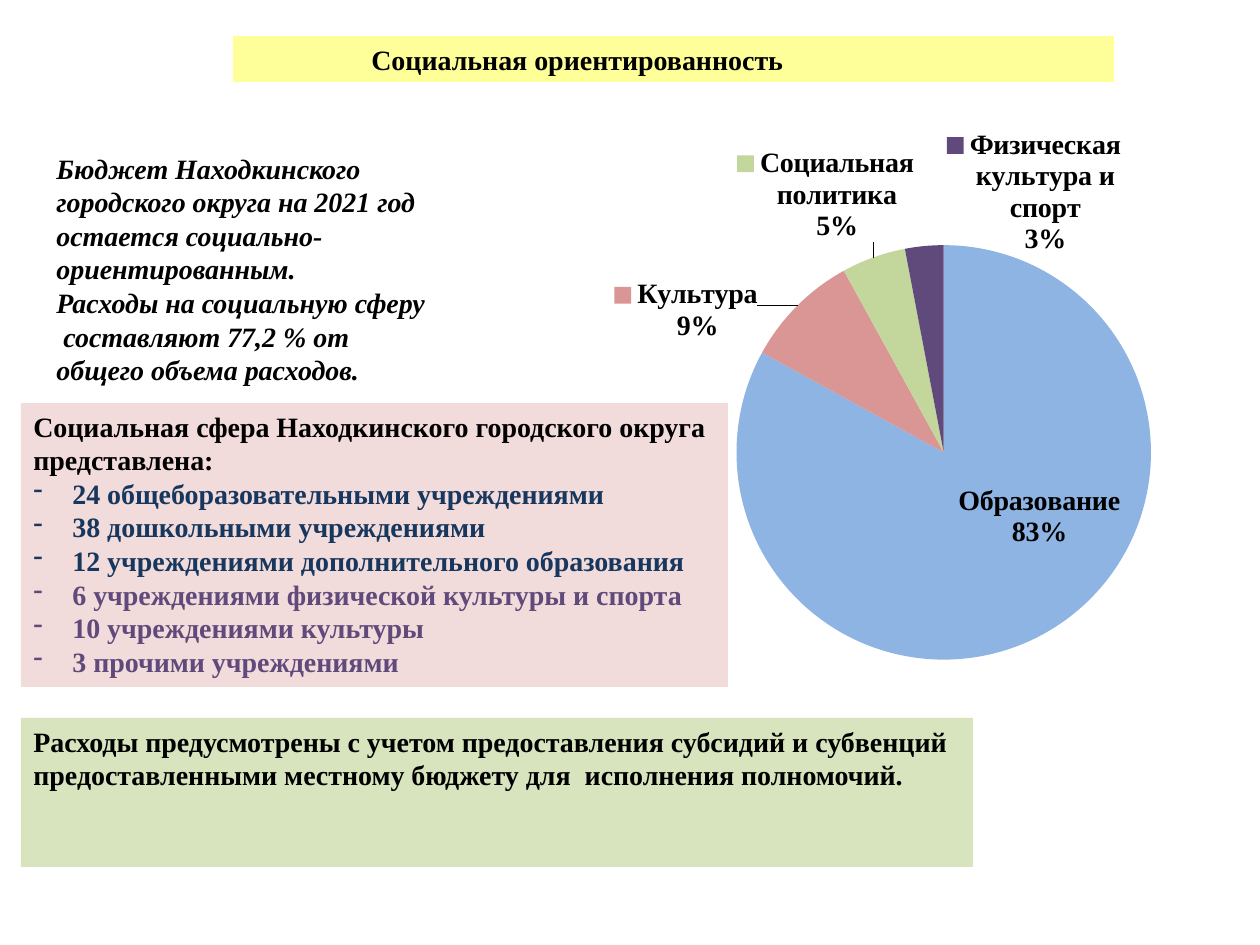
"""Build the slide on the social focus of the city budget."""
from dataclasses import dataclass, field
from typing import Any

import lxml.etree
import pptx
import pptx.chart.data
import pptx.dml.color
import pptx.enum.chart
import pptx.enum.shapes
import pptx.enum.text
import pptx.oxml
import pptx.oxml.ns
import pptx.util

SCALE = 914400 / 126
FACE = "Times New Roman"
COLORS = {
    "black": "000000", "yellow": "FFFF99", "pink": "F2DCDB", "green": "D7E4BD",
    "navy": "17375E", "purple": "604A7B", "blue": "8EB4E3", "rose": "D99694",
    "lime": "C3D69B",
}
BOLD = {"name": FACE, "size": pptx.util.Pt(16), "bold": True}
SLANT = {**BOLD, "italic": True}


@dataclass
class Line:
    text: str
    color: str = "black"
    dash: bool = False


@dataclass
class Panel:
    box: tuple[int, int, int, int]
    lines: list[Line]
    fill: str = ""
    style: dict[str, Any] = field(default_factory=lambda: BOLD)


@dataclass
class Slice:
    name: str
    value: int
    color: str
    shift: tuple[float, float]
    key: bool = True


PANELS = [
    Panel((233, 36, 881, 46), [Line("\tСоциальная ориентированность")], "yellow"),
    Panel((44, 145, 398, 326), [
        Line("Бюджет Находкинского городского округа на 2021 год остается "
             "социально-ориентированным."),
        Line("Расходы на социальную сферу  составляют 77,2 % от общего объема расходов."),
    ], style=SLANT),
    Panel((21, 403, 707, 284), [
        Line("Социальная сфера Находкинского городского округа"),
        Line("представлена:"),
        Line("24 общеборазовательными учреждениями", "navy", True),
        Line("38 дошкольными учреждениями", "navy", True),
        Line("12 учреждениями дополнительного образования", "navy", True),
        Line("6 учреждениями физической культуры и спорта", "purple", True),
        Line("10 учреждениями культуры", "purple", True),
        Line("3 прочими учреждениями", "purple", True),
    ], "pink"),
    Panel((21, 718, 952, 149), [
        Line("Расходы предусмотрены с учетом предоставления субсидий и субвенций"),
        Line("предоставленными местному бюджету для  исполнения полномочий."),
    ], "green"),
]
SLICES = [
    Slice("Образование", 83, "blue", (0.05, -0.03), False),
    Slice("Культура", 9, "rose", (-0.04, 0.05)),
    Slice("Социальная политика", 5, "lime", (0.05, -0.01)),
    Slice("Физическая культура и спорт", 3, "purple", (0.23, 0.02)),
]
AREA = (399, 96, 858, 829)
PLOT = {"x": 0.37, "y": 0.18, "w": 0.53, "h": 0.5}


def px(num: int) -> int:
    """Turn pixels into EMU."""
    return round(num * SCALE)


def tint(name: str) -> pptx.dml.color.RGBColor:
    """Look up a named colour."""
    return pptx.dml.color.RGBColor.from_string(COLORS[name])


def paint(font: Any, style: dict[str, Any], color: str) -> None:
    """Apply format values and a colour to a font."""
    for key, value in style.items():
        setattr(font, key, value)
    font.color.rgb = tint(color)


def layout(spots: dict[str, float], inner: bool = False) -> Any:
    """Make a manual chart layout."""
    parts = ""
    if inner:
        parts = ('<c:layoutTarget val="inner"/>'
                 '<c:xMode val="edge"/><c:yMode val="edge"/>')
    parts += "".join(f'<c:{key} val="{val}"/>' for key, val in spots.items())
    space = pptx.oxml.ns.nsdecls("c")
    return pptx.oxml.parse_xml(
        f"<c:layout {space}><c:manualLayout>{parts}</c:manualLayout></c:layout>")


def add_dash(props: Any) -> None:
    """Give a paragraph a hanging dash."""
    props.set("marL", str(px(39)))
    props.set("indent", str(-px(39)))
    lxml.etree.SubElement(props, pptx.oxml.ns.qn("a:buFontTx"))
    lxml.etree.SubElement(props, pptx.oxml.ns.qn("a:buChar")).set("char", "-")


def add_panel(slide: Any, panel: Panel) -> None:
    """Draw a text panel, filled or bare."""
    box = [px(num) for num in panel.box]
    if panel.fill:
        shape = slide.shapes.add_shape(pptx.enum.shapes.MSO_SHAPE.RECTANGLE, *box)
        shape.shadow.inherit = False
        shape.fill.solid()
        shape.fill.fore_color.rgb = tint(panel.fill)
        shape.line.fill.background()
    else:
        shape = slide.shapes.add_textbox(*box)
    frame = shape.text_frame
    frame.word_wrap = True
    frame.vertical_anchor = pptx.enum.text.MSO_ANCHOR.TOP
    for rank, line in enumerate(panel.lines):
        para = frame.add_paragraph() if rank else frame.paragraphs[0]
        para.alignment = pptx.enum.text.PP_ALIGN.LEFT
        props = para._p.get_or_add_pPr()
        props.set("defTabSz", str(px(126)))
        run = para.add_run()
        run.text = line.text
        paint(run.font, panel.style, line.color)
        if line.dash:
            add_dash(props)


def add_label(point: Any, part: Slice) -> None:
    """Label a slice with its name and share."""
    spots = pptx.enum.chart.XL_LABEL_POSITION
    label = point.data_label
    paint(label.font, BOLD, "black")
    label.position = spots.OUTSIDE_END if part.key else spots.CENTER
    node = label._get_or_add_dLbl()
    flags = {"LegendKey": part.key, "Val": False, "CatName": True,
             "SerName": False, "Percent": True}
    for name, flag in flags.items():
        node.find(pptx.oxml.ns.qn(f"c:show{name}")).set("val", str(int(flag)))
    lxml.etree.SubElement(node, pptx.oxml.ns.qn("c:separator")).text = "\n"
    node.insert(1, layout(dict(zip("xy", part.shift))))


def add_pie(slide: Any) -> None:
    """Draw the pie of social spending."""
    data = pptx.chart.data.CategoryChartData()
    data.categories = [part.name for part in SLICES]
    data.add_series("Series 1", [part.value for part in SLICES])
    kind = pptx.enum.chart.XL_CHART_TYPE.PIE
    chart = slide.shapes.add_chart(kind, *map(px, AREA), data).chart
    chart.has_legend = False
    chart.has_title = False
    paint(chart.font, {"name": "Calibri", "size": pptx.util.Pt(10)}, "black")
    plot = chart.plots[0]
    plot.vary_by_categories = True
    series = plot.series[0]
    labels = series.data_labels
    paint(labels.font, BOLD, "black")
    flags = {"show_value": False, "show_category_name": True, "show_percentage": True}
    for name, flag in flags.items():
        setattr(labels, name, flag)
    for rank, part in enumerate(SLICES):
        point = series.points[rank]
        point.format.fill.solid()
        point.format.fill.fore_color.rgb = tint(part.color)
        point.format.line.fill.background()
        add_label(point, part)
    area = chart._chartSpace.chart.plotArea
    for old in area.findall(pptx.oxml.ns.qn("c:layout")):
        area.remove(old)
    area.insert(0, layout(PLOT, True))


def main() -> None:
    """Build and save the deck."""
    deck = pptx.Presentation()
    deck.slide_width, deck.slide_height = px(1260), px(945)
    slide = deck.slides.add_slide(deck.slide_layouts[6])
    for panel in PANELS[:2]:
        add_panel(slide, panel)
    add_pie(slide)
    for panel in PANELS[2:]:
        add_panel(slide, panel)
    deck.save("out.pptx")


if __name__ == "__main__":
    main()
